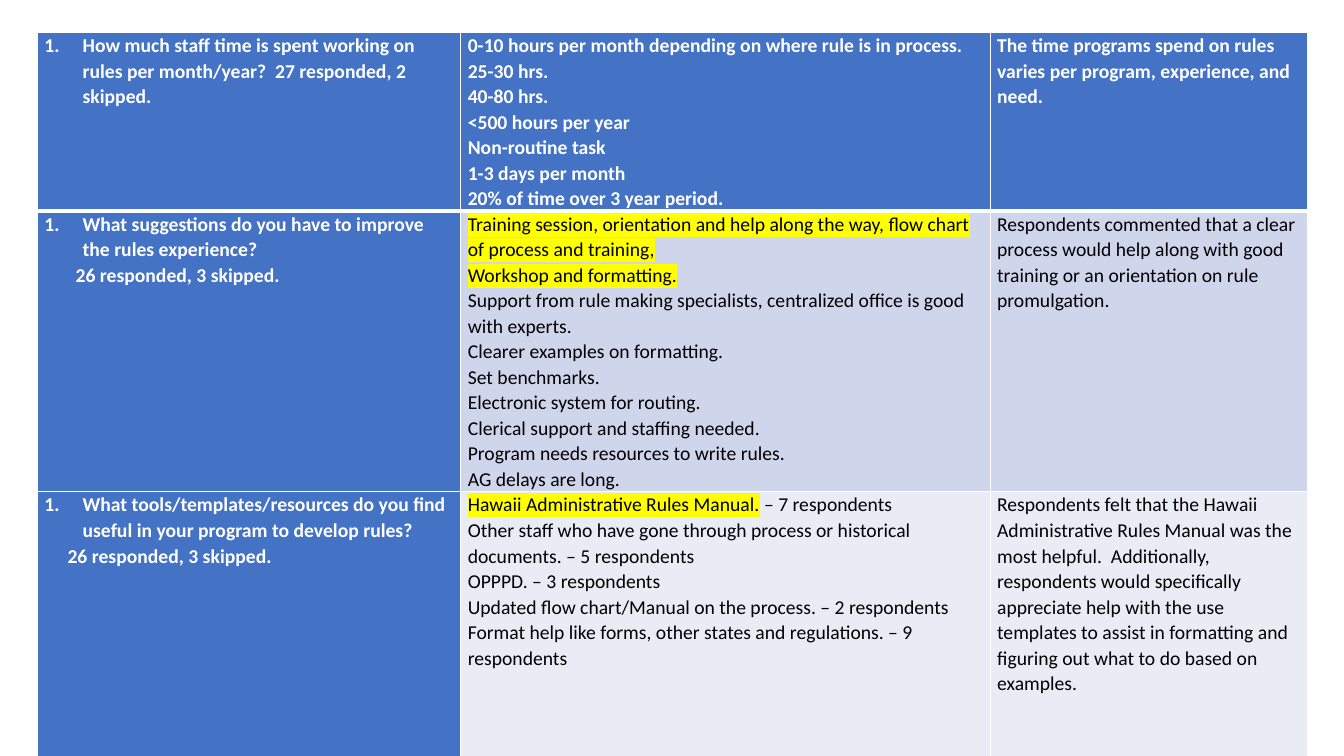
"""Build a slide with a table of survey questions, answers and summaries."""
from dataclasses import dataclass

from lxml import etree
from pptx import Presentation
from pptx.dml.color import RGBColor
from pptx.oxml.ns import qn
from pptx.util import Inches, Pt

BLANK_LAYOUT = 6
FONT, SIZE, LINE_SPACING = "Calibri", Pt(14), 1.07
LEFT, TOP, MARGIN, HANG = 0.37, 0.32, 0.07, 0.38
COL, ROW = 1.05, 0.22
COL_SPANS = (4, 5, 3)
COLORS = {"blue": "4472C4", "band": "CFD5EA", "pale": "E9EBF5",
          "white": "FFFFFF", "black": "000000", "yellow": "FFFF00"}


@dataclass(frozen=True)
class Run:
    text: str
    marked: bool = False


@dataclass(frozen=True)
class Para:
    runs: tuple[Run, ...]
    indent: float = 0
    numbered: bool = False


@dataclass(frozen=True)
class Question:
    span: int
    fill: str
    cells: tuple[list[Para], list[Para], list[Para]]
    heading: bool = False


def lines(*texts: str, marked: bool = False) -> list[Para]:
    return [Para((Run(text, marked),)) for text in texts]


def question(text: str, count: str = "", indent: float = 0) -> list[Para]:
    first = Para((Run(text),), HANG, True)
    return [first, Para((Run(count),), indent)] if count else [first]


QUESTIONS = [
    Question(8, "blue", (
        question("How much staff time is spent working on rules per month/year?"
                 "  27 responded, 2 skipped."),
        lines("0-10 hours per month depending on where rule is in process.",
              "25-30 hrs.", "40-80 hrs.", "<500 hours per year",
              "Non-routine task", "1-3 days per month",
              "20% of time over 3 year period."),
        lines("The time programs spend on rules varies per program, "
              "experience, and need.")), heading=True),
    Question(11, "band", (
        question("What suggestions do you have to improve the rules experience?",
                 "26 responded, 3 skipped.", 0.31),
        lines("Training session, orientation and help along the way, "
              "flow chart of process and training,",
              "Workshop and formatting.", marked=True)
        + lines("Support from rule making specialists, centralized office "
                "is good with experts.",
                "Clearer examples on formatting.", "Set benchmarks.",
                "Electronic system for routing.",
                "Clerical support and staffing needed.",
                "Program needs resources to write rules.",
                "AG delays are long."),
        lines("Respondents commented that a clear process would help along "
              "with good training or an orientation on rule promulgation."))),
    Question(12, "pale", (
        question("What tools/templates/resources do you find useful in your "
                 "program to develop rules?",
                 "26 responded, 3 skipped.", 0.23),
        [Para((Run("Hawaii Administrative Rules Manual.", True),
               Run(" – 7 respondents")))]
        + lines("Other staff who have gone through process or historical "
                "documents. – 5 respondents",
                "OPPPD. – 3 respondents",
                "Updated flow chart/Manual on the process. – 2 respondents",
                "Format help like forms, other states and regulations. "
                "– 9 respondents"),
        lines("Respondents felt that the Hawaii Administrative Rules Manual "
              "was the most helpful.  Additionally, respondents would "
              "specifically appreciate help with the use templates to assist "
              "in formatting and figuring out what to do based on examples."))),
]


def rgb(name: str) -> RGBColor:
    return RGBColor.from_string(COLORS[name])


def add_color(parent, name: str) -> None:
    etree.SubElement(parent, qn("a:srgbClr"), val=COLORS[name])


def set_borders(cell, top: float, bottom: float) -> None:
    tc_pr = cell._tc.get_or_add_tcPr()
    for side, width in (("L", 1), ("R", 1), ("T", top), ("B", bottom)):
        ln = etree.SubElement(tc_pr, qn(f"a:ln{side}"), w=str(Pt(width)))
        add_color(etree.SubElement(ln, qn("a:solidFill")), "white")


def add_run(p, run: Run, strong: bool) -> None:
    r = p.add_run()
    r.text = run.text
    r.font.size, r.font.bold = SIZE, strong
    r.font.color.rgb = rgb("white" if strong else "black")
    if run.marked:
        r_pr = r._r.get_or_add_rPr()
        add_color(etree.SubElement(r_pr, qn("a:highlight")), "yellow")
    r.font.name = FONT


def fill_cell(cell, paras: list[Para], fill: str, strong: bool) -> None:
    cell.fill.solid()
    cell.fill.fore_color.rgb = rgb(fill)
    cell.margin_left = cell.margin_right = Inches(MARGIN)
    cell.margin_top = cell.margin_bottom = 0
    tf = cell.text_frame
    for i, para in enumerate(paras):
        p = tf.add_paragraph() if i else tf.paragraphs[0]
        p.line_spacing = LINE_SPACING
        p_pr = p._p.get_or_add_pPr()
        p_pr.set("marL", str(Inches(para.indent)))
        p_pr.set("indent", str(Inches(-HANG if para.numbered else 0)))
        if para.numbered:
            etree.SubElement(p_pr, qn("a:buFont"), typeface="+mj-lt")
            etree.SubElement(p_pr, qn("a:buAutoNum"), type="arabicPeriod")
        for run in para.runs:
            add_run(p, run, strong)


def main() -> None:
    prs = Presentation()
    prs.slide_width, prs.slide_height = Inches(13.33), Inches(7.5)
    s = prs.slides.add_slide(prs.slide_layouts[BLANK_LAYOUT])
    height = sum(q.span for q in QUESTIONS) * ROW
    table = s.shapes.add_table(
        len(QUESTIONS), len(COL_SPANS), Inches(LEFT), Inches(TOP),
        Inches(sum(COL_SPANS) * COL), Inches(height)).table
    for column, span in zip(table.columns, COL_SPANS):
        column.width = Inches(span * COL)
    for i, q in enumerate(QUESTIONS):
        table.rows[i].height = Inches(q.span * ROW)
        for j, paras in enumerate(q.cells):
            cell = table.cell(i, j)
            set_borders(cell, 3 if i == 1 else 1, 3 if q.heading else 1)
            fill_cell(cell, paras, q.fill if j else "blue", q.heading or j == 0)
    prs.save("out.pptx")


if __name__ == "__main__":
    main()
